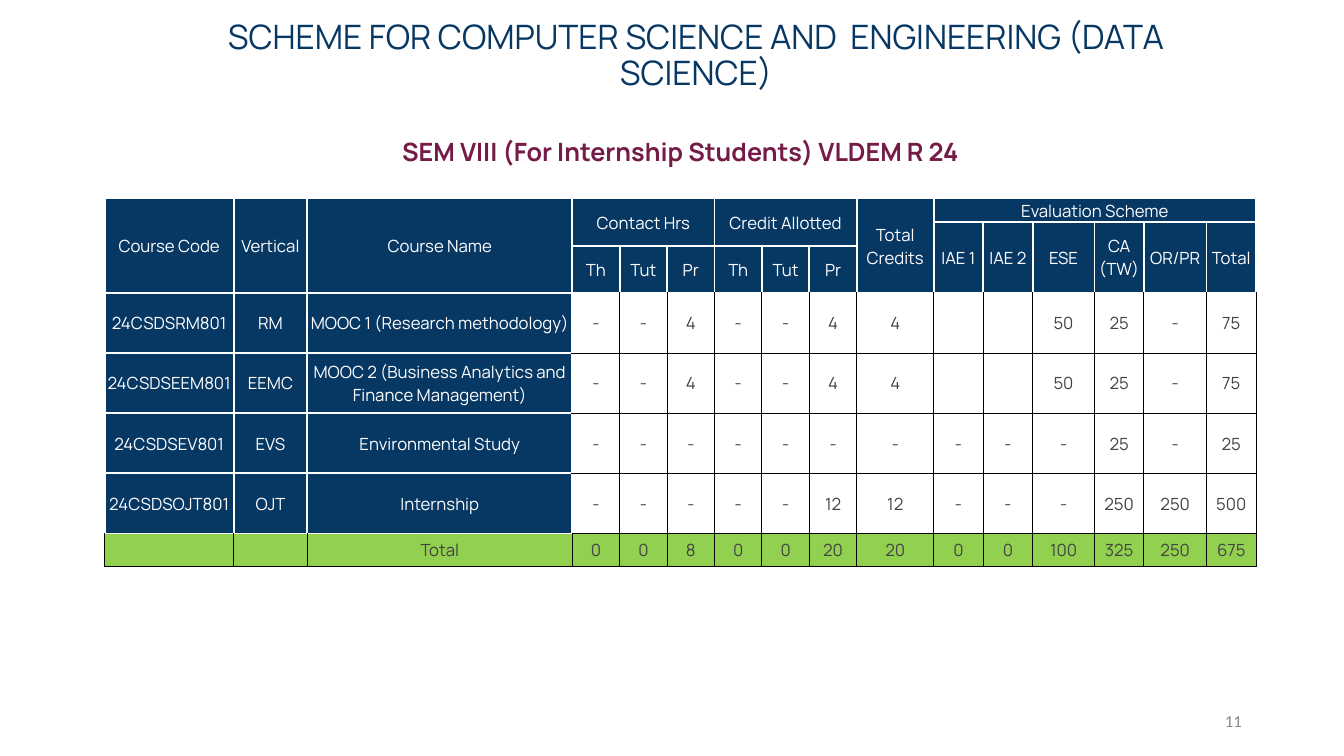
import pptx
import pptx.util
import pptx.dml.color
import pptx.enum.text
import pptx.oxml.ns
import lxml.etree

Pt = pptx.util.Pt
ALIGN = pptx.enum.text.PP_ALIGN
ANCHOR = pptx.enum.text.MSO_ANCHOR

WHITE, BLACK, NAVY, GREEN = "FFFFFF", "000000", "073763", "92D050"
GREY, PLUM, PALE = "434343", "741B47", "888888"

WIDTHS = [92, 52.7, 189.2] + [33.9] * 6 + [55, 35.3, 35.3, 44.2, 35.3, 44.8, 35.3]
HEIGHTS = [16.8, 17, 33.6] + [43] * 4 + [23.6]
HEAD = 3
SIDE = 3

SPANS = [
    (0, 0, 3, 1, "Course Code"),
    (0, 1, 3, 1, "Vertical"),
    (0, 2, 3, 1, "Course Name"),
    (0, 3, 2, 3, "Contact Hrs"),
    (0, 6, 2, 3, "Credit Allotted"),
    (0, 9, 3, 1, "Total Credits"),
    (0, 10, 1, 6, "Evaluation Scheme"),
]
SPANS += [
    (1, 10 + i, 2, 1, name)
    for i, name in enumerate(["IAE 1", "IAE 2", "ESE", "CA (TW)", "OR/PR", "Total"])
]
SPANS += [(2, 3 + i, 1, 1, name) for i, name in enumerate(["Th", "Tut", "Pr"] * 2)]

BODY = [
    ["24CSDSRM801", "RM", "MOOC 1 (Research methodology)",
     "-", "-", "4", "-", "-", "4", "4", "", "", "50", "25", "-", "75"],
    ["24CSDSEEM801", "EEMC", "MOOC 2 (Business Analytics and Finance Management)",
     "-", "-", "4", "-", "-", "4", "4", "", "", "50", "25", "-", "75"],
    ["24CSDSEV801", "EVS", "Environmental Study",
     "-", "-", "-", "-", "-", "-", "-", "-", "-", "-", "25", "-", "25"],
    ["24CSDSOJT801", "OJT", "Internship",
     "-", "-", "-", "-", "-", "12", "12", "-", "-", "-", "250", "250", "500"],
    ["", "", "Total",
     "0", "0", "8", "0", "0", "20", "20", "0", "0", "100", "325", "250", "675"],
]
LAST = HEAD + len(BODY) - 1


def tint(code):
    return pptx.dml.color.RGBColor.from_string(code)


def dark(row, col):
    return row < HEAD or (col < SIDE and row < LAST)


class Deck:
    font = "Manrope"

    def __init__(self):
        self.show = pptx.Presentation()
        self.show.slide_width, self.show.slide_height = Pt(960), Pt(540)
        self.slide = self.show.slides.add_slide(self.show.slide_layouts[6])

    def style(self, para, size, color, align=ALIGN.CENTER, bold=False, font=None):
        para.alignment = align
        for run in para.runs:
            run.font.name = font or self.font
            run.font.size = Pt(size)
            run.font.bold = bold
            run.font.color.rgb = tint(color)

    def text(self, words, box, pad, anchor, space=None, **look):
        frame = self.slide.shapes.add_textbox(*map(Pt, box)).text_frame
        frame.word_wrap = True
        frame.vertical_anchor = anchor
        frame.margin_left = frame.margin_right = Pt(7.2)
        frame.margin_top = frame.margin_bottom = Pt(pad)
        frame.text = words
        para = frame.paragraphs[0]
        if space:
            para.line_spacing = space
        self.style(para, **look)

    def edge(self, cell, side, color):
        prop = cell._tc.get_or_add_tcPr()
        qn = pptx.oxml.ns.qn
        width = Pt(1.5 if color == WHITE else 0.75)
        line = lxml.etree.SubElement(prop, qn("a:ln" + side), w=str(width))
        fill = lxml.etree.SubElement(line, qn("a:solidFill"))
        lxml.etree.SubElement(fill, qn("a:srgbClr"), val=color)

    def cell(self, cell, row, col, words):
        mine = dark(row, col)
        left = mine or (col > 0 and dark(row, col - 1))
        top = mine or dark(row - 1, col)
        for side, light in zip("LRTB", (left, mine, top, mine)):
            self.edge(cell, side, WHITE if light else BLACK)
        cell.fill.solid()
        cell.fill.fore_color.rgb = tint(NAVY if mine else GREEN if row == LAST else WHITE)
        cell.margin_left = cell.margin_right = cell.margin_top = Pt(0.7)
        cell.margin_bottom = 0
        cell.vertical_anchor = ANCHOR.MIDDLE
        cell.text_frame.text = words
        para = cell.text_frame.paragraphs[0]
        self.style(para, 12, WHITE if mine else GREY)
        if not words:
            lxml.etree.SubElement(para._p, pptx.oxml.ns.qn("a:endParaRPr"), sz="1200")

    def table(self, left, top):
        rows, cols = len(HEIGHTS), len(WIDTHS)
        size = (left, top, sum(WIDTHS), sum(HEIGHTS))
        grid = self.slide.shapes.add_table(rows, cols, *map(Pt, size)).table
        grid.first_row = grid.horz_banding = False
        for col, width in zip(grid.columns, WIDTHS):
            col.width = Pt(width)
        for row, height in zip(grid.rows, HEIGHTS):
            row.height = Pt(height)
        words = {(row, col): name for row, col, _, _, name in SPANS}
        for i, line in enumerate(BODY):
            words.update({(HEAD + i, col): name for col, name in enumerate(line)})
        for row in range(rows):
            for col in range(cols):
                self.cell(grid.cell(row, col), row, col, words.get((row, col), ""))
        for row, col, high, wide, _ in SPANS:
            if high * wide > 1:
                grid.cell(row, col).merge(grid.cell(row + high - 1, col + wide - 1))


def main():
    deck = Deck()
    deck.text("11", (678.2, 500.4, 216, 28.8), 3.6, ANCHOR.MIDDLE,
              size=12, color=PALE, align=ALIGN.RIGHT, font="Calibri")
    deck.text("SCHEME FOR COMPUTER SCIENCE AND  ENGINEERING (DATA SCIENCE)",
              (133.2, 14.4, 728, 52.6), 3.6, ANCHOR.MIDDLE, space=0.9,
              size=24, color=NAVY)
    deck.text("SEM VIII (For Internship Students) VLDEM R 24",
              (175, 90, 622, 28.8), 7.2, ANCHOR.TOP,
              size=18, color=PLUM, bold=True)
    deck.table(74.9, 141.8)
    deck.show.save("out.pptx")


if __name__ == "__main__":
    main()
